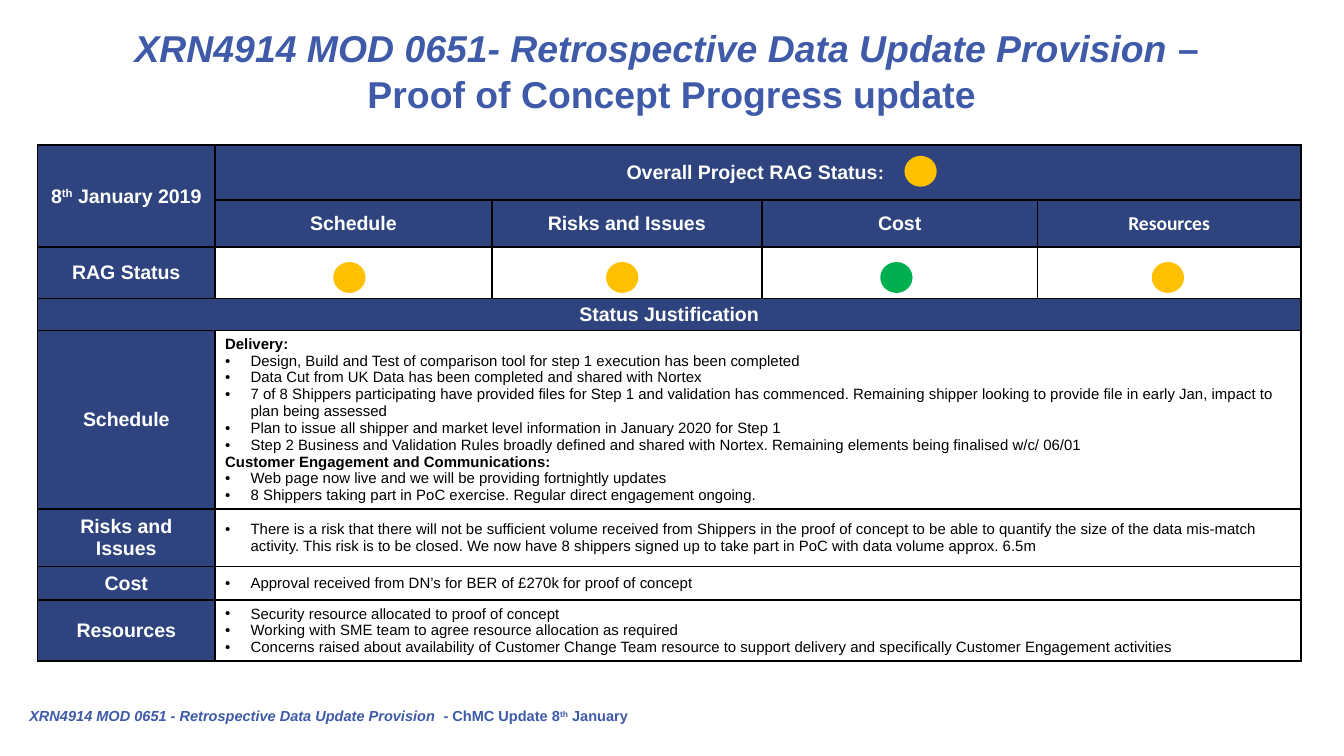
from lxml.etree import SubElement
from pptx import Presentation
from pptx.dml.color import RGBColor
from pptx.enum.shapes import MSO_SHAPE
from pptx.enum.text import MSO_ANCHOR, PP_ALIGN
from pptx.oxml import parse_xml
from pptx.oxml.ns import nsdecls, qn
from pptx.util import Inches, Pt

NAVY, BLUE, WHITE, BLACK = "2F447E", "3E5AA8", "FFFFFF", "000000"
AMBER, GREEN = "FFC000", "00B050"

COLUMN_WIDTHS = [1.32, 2.06, 2.01, 2.05, 1.96]
ROW_HEIGHTS = [0.41, 0.35, 0.38, 0.24, 0.97, 0.43, 0.25, 0.31]
TOPICS = ["Schedule", "Risks and Issues", "Cost", "Resources"]
STATUSES = [(2.48, AMBER), (4.51, AMBER), (6.55, GREEN), (8.57, AMBER)]

# Lines ending with a colon are headings, all others are bullets.
JUSTIFICATIONS = [
    [
        "Delivery:",
        "Design, Build and Test of comparison tool for step 1 execution has been completed",
        "Data Cut from UK Data has been completed and shared with Nortex",
        "7 of 8 Shippers participating have provided files for Step 1 and validation has "
        "commenced. Remaining shipper looking to provide file in early Jan, impact to "
        "plan being assessed",
        "Plan to issue all shipper and market level information in January 2020 for Step 1",
        "Step 2 Business and Validation Rules broadly defined and shared with Nortex. "
        "Remaining elements being finalised w/c/ 06/01",
        "Customer Engagement and Communications:",
        "Web page now live and we will be providing fortnightly updates",
        "8 Shippers taking part in PoC exercise. Regular direct engagement ongoing.",
    ],
    [
        "There is a risk that there will not be sufficient volume received from Shippers in "
        "the proof of concept to be able to quantify the size of the data mis-match "
        "activity. This risk is to be closed. We now have 8 shippers signed up to take "
        "part in PoC with data volume approx. 6.5m",
    ],
    ["Approval received from DN’s for BER of £270k for proof of concept"],
    [
        "Security resource allocated to proof of concept",
        "Working with SME team to agree resource allocation as required",
        "Concerns raised about availability of Customer Change Team resource to support "
        "delivery and specifically Customer Engagement activities",
    ],
]


def color(value):
    return RGBColor.from_string(value)


def style_font(font, size, value, bold=True, italic=False, name="Arial"):
    font.size = Pt(size)
    font.name = name
    font.bold = bold
    font.italic = italic
    font.color.rgb = color(value)


def add_run(paragraph, text, size, value, italic=False, raised=False, name="Arial"):
    run = paragraph.add_run()
    run.text = text
    style_font(run.font, size, value, italic=italic, name=name)
    if raised:
        run._r.get_or_add_rPr().set("baseline", "30000")


def add_bullet(paragraph):
    properties = paragraph._p.get_or_add_pPr()
    properties.set("marL", str(Inches(0.19)))
    properties.set("indent", str(Inches(-0.19)))
    SubElement(properties, qn("a:buFont"), typeface="Arial")
    SubElement(properties, qn("a:buChar"), char="•")


def style_cell(cell, fill):
    cell.margin_left = cell.margin_right = Pt(5.4)
    cell.margin_top = cell.margin_bottom = Pt(2.7)
    cell.vertical_anchor = MSO_ANCHOR.MIDDLE
    cell.fill.solid()
    cell.fill.fore_color.rgb = color(fill)
    properties = cell._tc.get_or_add_tcPr()
    for index, side in enumerate(["lnL", "lnR", "lnT", "lnB"]):
        properties.insert(index, parse_xml(
            f'<a:{side} {nsdecls("a")} w="12700"><a:solidFill>'
            f'<a:srgbClr val="{BLACK}"/></a:solidFill></a:{side}>'))


def fill_header(cell, *parts, name="Arial"):
    """Write centred white text; each part is a (text, size, raised) tuple."""
    paragraph = cell.text_frame.paragraphs[0]
    paragraph.alignment = PP_ALIGN.CENTER
    for text, size, raised in parts:
        add_run(paragraph, text, size, WHITE, raised=raised, name=name)


def fill_justification(cell, lines):
    cell.text_frame.text = "\n".join(lines)
    for paragraph, line in zip(cell.text_frame.paragraphs, lines):
        heading = line.endswith(":")
        if not heading:
            add_bullet(paragraph)
        for run in paragraph.runs:
            style_font(run.font, 8, BLACK, bold=heading)


def add_status_table(slide, left, top):
    table = slide.shapes.add_table(
        len(ROW_HEIGHTS), len(COLUMN_WIDTHS), Inches(left), Inches(top),
        Inches(sum(COLUMN_WIDTHS)), Inches(sum(ROW_HEIGHTS))).table
    for column, width in zip(table.columns, COLUMN_WIDTHS):
        column.width = Inches(width)
    for row, height in zip(table.rows, ROW_HEIGHTS):
        row.height = Inches(height)
    for row_index in range(len(ROW_HEIGHTS)):
        for column_index in range(len(COLUMN_WIDTHS)):
            is_header = column_index == 0 or row_index in (0, 1, 3)
            cell = table.cell(row_index, column_index)
            style_cell(cell, NAVY if is_header else WHITE)
            cell.text_frame.paragraphs[0].font.size = Pt(8)

    table.cell(0, 0).merge(table.cell(1, 0))
    table.cell(0, 1).merge(table.cell(0, 4))
    table.cell(3, 0).merge(table.cell(3, 4))
    fill_header(table.cell(0, 0), ("8", 10.5, False), ("th", 10.5, True),
                (" January 2019", 10.5, False))
    fill_header(table.cell(0, 1), ("Overall Project RAG Status", 10.5, False),
                (": ", 10, False))
    fill_header(table.cell(2, 0), ("RAG Status", 10.5, False))
    fill_header(table.cell(3, 0), ("Status Justification", 10.5, False))
    for index, (topic, lines) in enumerate(zip(TOPICS, JUSTIFICATIONS)):
        name = "Calibri" if topic == "Resources" else "Arial"
        fill_header(table.cell(1, index + 1), (topic, 10.5, False), name=name)
        row_index = index + 4
        table.cell(row_index, 1).merge(table.cell(row_index, 4))
        fill_header(table.cell(row_index, 0), (topic, 10.5, False))
        fill_justification(table.cell(row_index, 1), lines)


def add_status_light(slide, left, top, fill):
    light = slide.shapes.add_shape(MSO_SHAPE.OVAL, Inches(left), Inches(top),
                                   Inches(0.24), Inches(0.23))
    light.shadow.inherit = False
    light.fill.solid()
    light.fill.fore_color.rgb = color(fill)
    light.line.fill.background()


def add_text_box(slide, left, top, width, height):
    box = slide.shapes.add_textbox(Inches(left), Inches(top), Inches(width), Inches(height))
    box.text_frame.word_wrap = True
    return box.text_frame


def add_title(slide, left, top, width, height):
    text_frame = add_text_box(slide, left, top, width, height)
    text_frame.margin_top = Inches(0.04)
    paragraph = text_frame.paragraphs[0]
    paragraph.alignment = PP_ALIGN.CENTER
    paragraph.line_spacing = Pt(24.5)
    add_run(paragraph, "XRN4914 MOD 0651- Retrospective Data Update Provision ", 20, BLUE,
            italic=True)
    add_run(paragraph, "– ", 20, BLUE)
    paragraph.add_line_break()
    add_run(paragraph, "Proof of Concept Progress update", 20, BLUE)


def add_footer(slide, left, top, width, height):
    text_frame = add_text_box(slide, left, top, width, height)
    text_frame.vertical_anchor = MSO_ANCHOR.MIDDLE
    paragraph = text_frame.paragraphs[0]
    add_run(paragraph, "XRN4914 MOD 0651 - Retrospective Data Update Provision", 7.8, BLUE,
            italic=True)
    add_run(paragraph, "  - ChMC Update 8", 7.8, BLUE)
    add_run(paragraph, "th", 7.8, BLUE, raised=True)
    add_run(paragraph, " January", 7.8, BLUE)


def main():
    presentation = Presentation()
    presentation.slide_width = Inches(10)
    presentation.slide_height = presentation.slide_width * 9 // 16
    slide = presentation.slides.add_slide(presentation.slide_layouts[6])
    add_status_table(slide, 0.28, 1.08)
    add_status_light(slide, 6.73, 1.16, AMBER)
    for left, fill in STATUSES:
        add_status_light(slide, left, 1.95, fill)
    add_title(slide, 0.5, 0.14, 9, 0.7)
    add_footer(slide, 0.12, 5.17, 9, 0.31)
    presentation.save("out.pptx")


if __name__ == "__main__":
    main()
